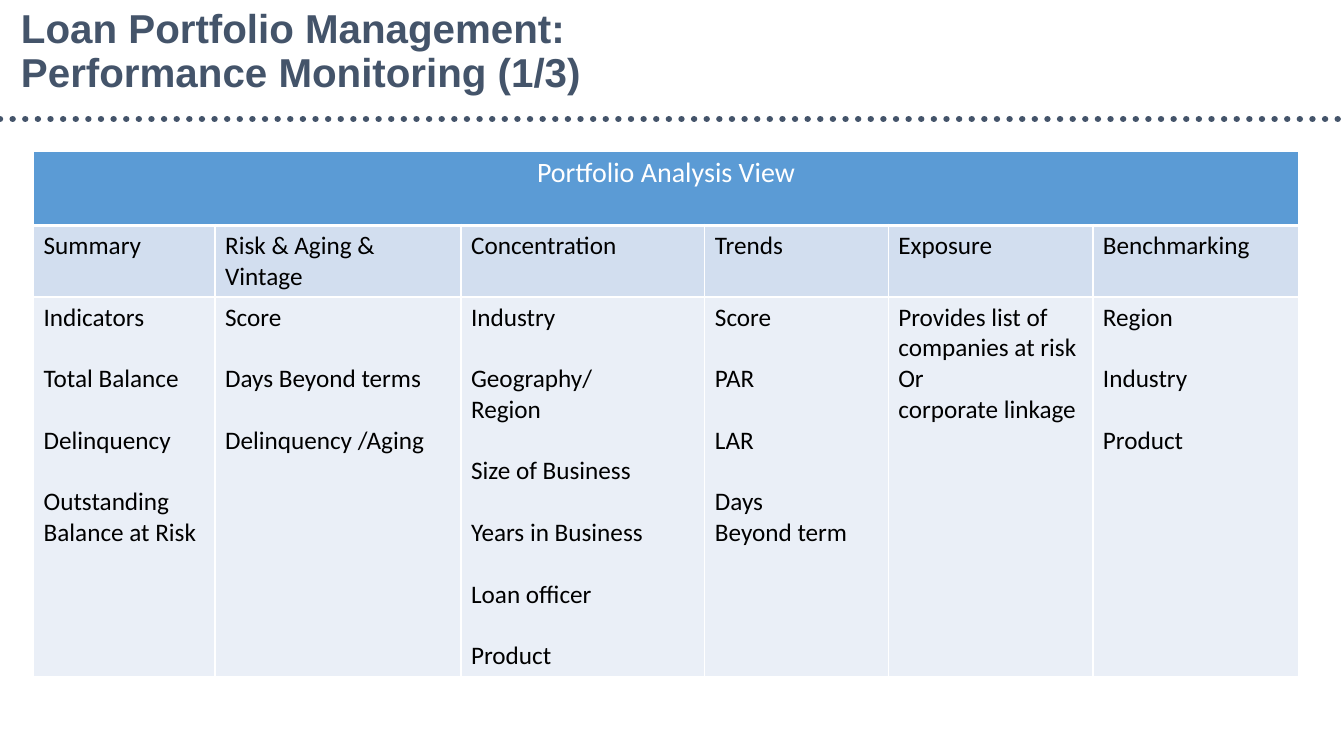
from lxml import etree
from pptx import Presentation
from pptx.dml.color import RGBColor
from pptx.enum import dml, shapes, text
from pptx.oxml.ns import qn
from pptx.util import Pt

NAVY, WHITE, BLACK = "44546A", "FFFFFF", "000000"
BLUE, MID, PALE = "5B9BD5", "D2DEEF", "EAEFF7"
WIDE, HIGH = 960, 540
LINE = 22  # height of one line of body text

WIDTHS = [129.6, 175.7, 174.2, 131, 146.2, 146.9]
HEIGHTS = [53, 51.2, 271]
# Heading of each column, then its groups of lines
VIEWS = [
    ("Summary", [["Indicators"], ["Total Balance"], ["Delinquency"],
                 ["Outstanding", "Balance at Risk"]]),
    ("Risk & Aging & Vintage", [["Score"], ["Days Beyond terms"],
                                ["Delinquency /Aging"]]),
    ("Concentration", [["Industry"], ["Geography/", "Region"],
                       ["Size of Business"], ["Years in Business"],
                       ["Loan officer"], ["Product"]]),
    ("Trends", [["Score"], ["PAR"], ["LAR"], ["Days", "Beyond term"]]),
    ("Exposure", [["Provides list of", "companies at risk", "Or",
                   "corporate linkage"]]),
    ("Benchmarking", [["Region"], ["Industry"], ["Product"]]),
]


def tint(code):
    return RGBColor.from_string(code)


def style(font, name, size, color, bold=False):
    font.name, font.size, font.bold = name, Pt(size), bold
    font.color.rgb = tint(color)


def add_title(slide, left, top, width, height):
    title = slide.shapes.title
    title.left, title.top = Pt(left), Pt(top)
    title.width, title.height = Pt(width), Pt(height)
    frame = title.text_frame
    frame.margin_left = frame.margin_right = 0
    frame.margin_top = frame.margin_bottom = 0
    frame.word_wrap = True
    frame.auto_size = text.MSO_AUTO_SIZE.NONE
    frame.vertical_anchor = text.MSO_ANCHOR.MIDDLE
    frame.text = "Loan Portfolio Management:\vPerformance Monitoring (1/3)"
    para = frame.paragraphs[0]
    para.alignment = text.PP_ALIGN.LEFT
    para.line_spacing = 0.9
    for run in para.runs:
        style(run.font, "Arial", 28.8, NAVY, True)


def add_rule(slide, left, top, width):
    """Draw a line of round dots."""
    rule = slide.shapes.add_connector(
        shapes.MSO_CONNECTOR.STRAIGHT,
        Pt(left), Pt(top), Pt(left + width), Pt(top))
    rule.line.color.rgb = tint(NAVY)
    rule.line.width = Pt(4.5)
    rule.line.dash_style = dml.MSO_LINE.ROUND_DOT
    props = rule._element.spPr
    props.find(qn("a:ln")).set("cap", "rnd")
    etree.SubElement(props, qn("a:effectLst"))


def add_edges(cell, base):
    """Give a cell white borders, the lower one of the base width."""
    props = cell._tc.get_or_add_tcPr()
    for spot, (side, width) in enumerate(
            [("L", 1), ("R", 1), ("T", 1), ("B", base)]):
        edge = etree.Element(qn(f"a:ln{side}"), w=str(Pt(width)))
        fill = etree.SubElement(edge, qn("a:solidFill"))
        etree.SubElement(fill, qn("a:srgbClr"), val=WHITE)
        props.insert(spot, edge)


def fill_cell(cell, groups, fill, size=18, color=BLACK, base=1):
    """Write groups of lines, with one line of space between groups."""
    cell.fill.solid()
    cell.fill.fore_color.rgb = tint(fill)
    add_edges(cell, base)
    frame = cell.text_frame
    frame.text = "\n".join(line for group in groups for line in group)
    paras = iter(frame.paragraphs)
    for rank, group in enumerate(groups):
        for spot, _ in enumerate(group):
            para = next(paras)
            if rank and not spot:
                para.space_before = Pt(LINE)
            for run in para.runs:
                style(run.font, "Calibri", size, color)


def add_views(slide, left, top):
    table = slide.shapes.add_table(
        len(HEIGHTS), len(WIDTHS), Pt(left), Pt(top),
        Pt(sum(WIDTHS)), Pt(sum(HEIGHTS))).table
    for row, height in zip(table.rows, HEIGHTS):
        row.height = Pt(height)
    for col, width in zip(table.columns, WIDTHS):
        col.width = Pt(width)
    head = table.cell(0, 0)
    head.merge(table.cell(0, len(WIDTHS) - 1))
    fill_cell(head, [["Portfolio Analysis View"]], BLUE, 20, WHITE, 3)
    head.text_frame.paragraphs[0].alignment = text.PP_ALIGN.CENTER
    for col, (name, groups) in enumerate(VIEWS):
        fill_cell(table.cell(1, col), [[name]], MID)
        fill_cell(table.cell(2, col), groups, PALE)


def main():
    deck = Presentation()
    deck.slide_width, deck.slide_height = Pt(WIDE), Pt(HIGH)
    slide = deck.slides.add_slide(deck.slide_layouts[5])
    add_rule(slide, 0, 85, WIDE)
    add_title(slide, 15, 7, 610, 61)
    add_views(slide, 24, 108)
    deck.save("out.pptx")


if __name__ == "__main__":
    main()
